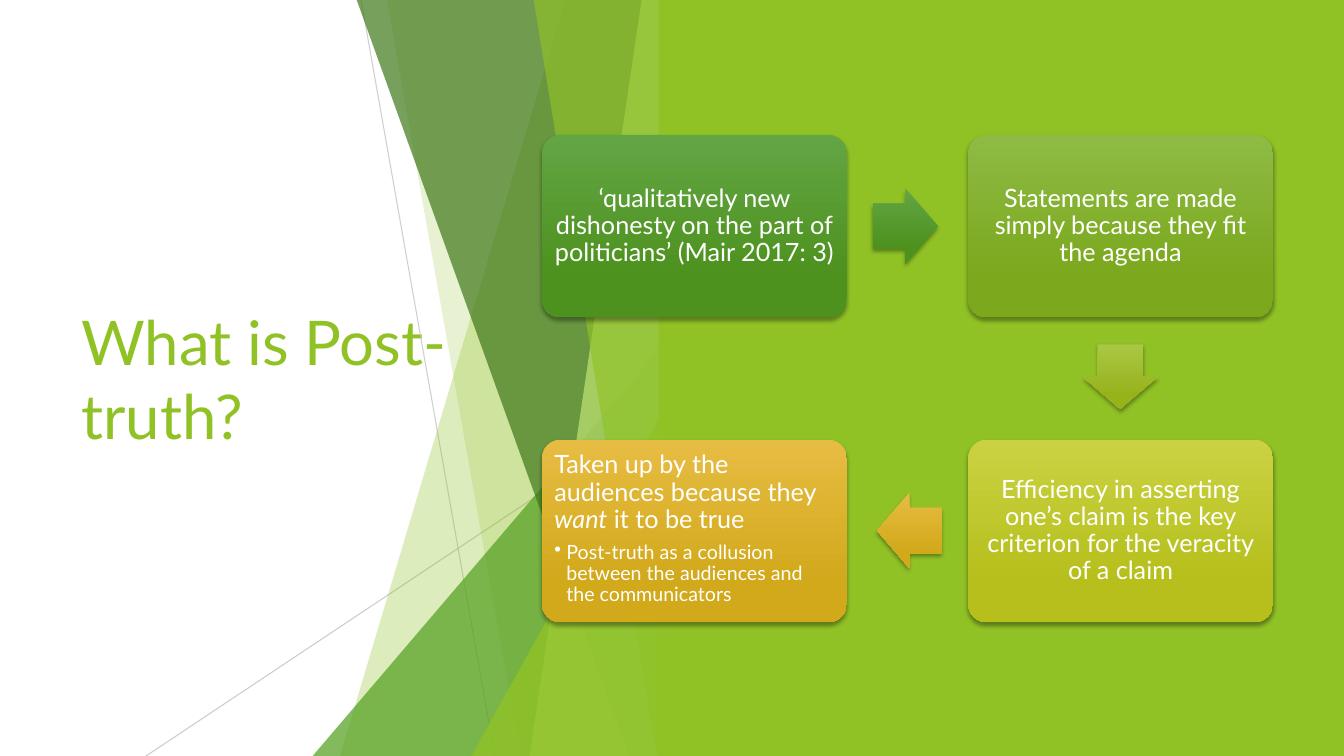
from lxml.etree import SubElement
from pptx import Presentation
from pptx.dml.color import RGBColor
from pptx.enum.shapes import MSO_CONNECTOR, MSO_SHAPE
from pptx.enum.text import MSO_ANCHOR, PP_ALIGN
from pptx.oxml.ns import qn
from pptx.util import Cm, Pt

COLORS = {
    "white": "FFFFFF", "lime": "90C226", "green": "54A021",
    "dark": "3F7819", "pale": "C0E474", "grey": "BFBFBF",
}
GRADS = {
    "leaf": ("63A545", "4D921E"), "moss": ("8EBB44", "7BA81D"),
    "olive": ("AAC744", "97B31C"), "citrus": ("CAD243", "B6BF1B"),
    "gold": ("E7BC43", "D2A91B"),
}
WIDTH, HEIGHT = 33.87, 19.05
EDGE = 16.92


class Deck:
    font = "Lato"

    def __init__(self):
        self.prs = Presentation()
        self.prs.slide_width, self.prs.slide_height = Cm(WIDTH), Cm(HEIGHT)
        self.slide = self.prs.slides.add_slide(self.prs.slide_layouts[6])
        self.shapes = self.slide.shapes

    def paint(self, fill, name, alpha=100):
        fill.solid()
        fill.fore_color.rgb = RGBColor.from_string(COLORS[name])
        if alpha < 100:
            color = fill._xPr.find(qn("a:solidFill"))[0]
            SubElement(color, qn("a:alpha"), val=str(alpha * 1000))

    def flat(self, shape, name, alpha=100):
        self.paint(shape.fill, name, alpha)
        shape.line.fill.background()
        shape.shadow.inherit = False

    def block(self, kind, box, name, alpha=100):
        shape = self.shapes.add_shape(kind, *map(Cm, box))
        self.flat(shape, name, alpha)
        return shape

    def wedge(self, left, top, name, alpha):
        box = (left, top, EDGE - left, HEIGHT - top)
        shape = self.block(MSO_SHAPE.ISOSCELES_TRIANGLE, box, name, alpha)
        shape.adjustments[0] = 1

    def shard(self, top, foot, name, alpha):
        pen = self.shapes.build_freeform(Cm(top), 0)
        pen.add_line_segments([(Cm(EDGE), 0), (Cm(EDGE), Cm(HEIGHT)), (Cm(foot), Cm(HEIGHT))])
        self.flat(pen.convert_to_shape(), name, alpha)

    def line(self, ends, alpha):
        line = self.shapes.add_connector(MSO_CONNECTOR.STRAIGHT, *map(Cm, ends))
        line.line.width = Pt(0.75)
        self.paint(line.line.fill, "grey", alpha)
        SubElement(line._element.spPr, qn("a:effectLst"))

    def raised(self, kind, box, grad, adjust):
        shape = self.shapes.add_shape(kind, *map(Cm, box))
        shape.fill.gradient()
        shape.fill.gradient_angle = 270
        for stop, tone, spot in zip(shape.fill.gradient_stops, GRADS[grad], (0, 0.78)):
            stop.color.rgb = RGBColor.from_string(tone)
            stop.position = spot
        shape.line.fill.background()
        shape.shadow.inherit = False
        effects = shape._element.spPr.find(qn("a:effectLst"))
        shadow = SubElement(effects, qn("a:outerShdw"), blurRad="38100", dist="25400",
                            dir="5400000", rotWithShape="0")
        black = SubElement(shadow, qn("a:srgbClr"), val="000000")
        SubElement(black, qn("a:alpha"), val="35000")
        for i, value in enumerate(adjust):
            shape.adjustments[i] = value
        return shape

    def style(self, para, size, name):
        for run in para.runs:
            run.font.name, run.font.size = self.font, Pt(size)
            run.font.color.rgb = RGBColor.from_string(COLORS[name])

    def title(self, box, text):
        frame = self.shapes.add_textbox(*map(Cm, box)).text_frame
        frame.word_wrap = True
        frame.vertical_anchor = MSO_ANCHOR.MIDDLE
        frame.text = text
        self.style(frame.paragraphs[0], 44, "lime")

    def card(self, box, grad, text, accent="", point=""):
        shape = self.raised(MSO_SHAPE.ROUNDED_RECTANGLE, box, grad, [0.1])
        frame = shape.text_frame
        frame.word_wrap = True
        frame.margin_left = frame.margin_right = Cm(0.18)
        frame.margin_top = frame.margin_bottom = Cm(0.18)
        frame.vertical_anchor = MSO_ANCHOR.TOP if point else MSO_ANCHOR.MIDDLE
        para = frame.paragraphs[0]
        para.alignment = PP_ALIGN.LEFT if point else PP_ALIGN.CENTER
        para.line_spacing, para.space_after = 0.9, Pt(6.3)
        before, mark, after = text.partition(accent) if accent else (text, "", "")
        for part in filter(None, (before, mark, after)):
            run = para.add_run()
            run.text = part
            run.font.italic = part == accent
        self.style(para, 18, "white")
        if point:
            self.bullet(frame.add_paragraph(), point)

    def bullet(self, para, text):
        para.text = text
        para.level, para.alignment = 1, PP_ALIGN.LEFT
        para.line_spacing, para.space_after = 0.9, Pt(2.1)
        self.style(para, 14, "white")
        props = para._p.get_or_add_pPr()
        props.set("marL", str(Cm(0.3)))
        props.set("indent", str(-Cm(0.3)))
        SubElement(props, qn("a:buChar"), char="•")


def main():
    deck = Deck()
    deck.title((1.8, 3.84, 9.86, 11.38), "What is Post-truth?")

    deck.line((9.1, 0, 12.47, HEIGHT), 75)
    deck.line((EDGE, 10.24, 3.68, HEIGHT), 80)
    deck.shard(14.25, 8.57, "lime", 30)
    deck.shard(9.75, 13.12, "lime", 20)
    deck.wedge(7.88, 8.46, "green", 72)
    deck.shard(8.99, 15.85, "dark", 70)
    deck.shard(16.17, 13.35, "pale", 70)
    deck.shard(13.45, 16.55, "lime", 65)
    deck.wedge(11.88, 9.98, "lime", 80)
    deck.block(MSO_SHAPE.RECTANGLE, (16.6, 0, WIDTH - 16.6, HEIGHT), "lime")

    left, right = 13.66, 24.4
    top, low = 3.4, 11.08
    size = (7.68, 4.6)
    deck.card((left, top, *size), "leaf",
              "‘qualitatively new dishonesty on the part of politicians’ (Mair 2017: 3)")
    deck.card((right, top, *size), "moss",
              "Statements are made simply because they fit the agenda")
    deck.card((right, low, *size), "citrus",
              "Efficiency in asserting one’s claim is the key criterion for the veracity of a claim")
    deck.card((left, low, *size), "gold",
              "Taken up by the audiences because they want it to be true", "want",
              "Post-truth as a collusion between the audiences and the communicators")

    for kind, box, grad in (
        (MSO_SHAPE.RIGHT_ARROW, (22, 4.75, 1.63, 1.9), "leaf"),
        (MSO_SHAPE.DOWN_ARROW, (27.28, 8.68, 1.9, 1.63), "olive"),
        (MSO_SHAPE.LEFT_ARROW, (22.1, 12.42, 1.63, 1.9), "gold"),
    ):
        deck.raised(kind, box, grad, [0.6, 0.5])

    deck.prs.save("out.pptx")


if __name__ == "__main__":
    main()
